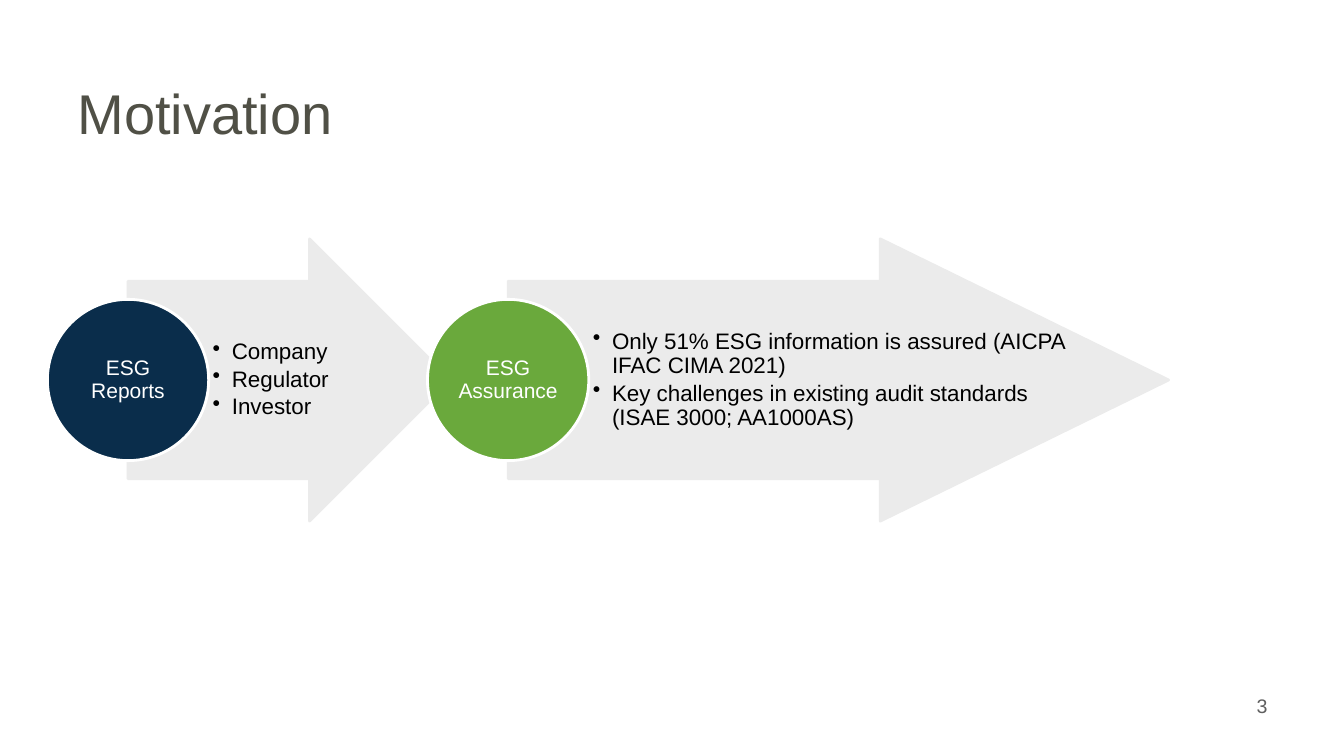
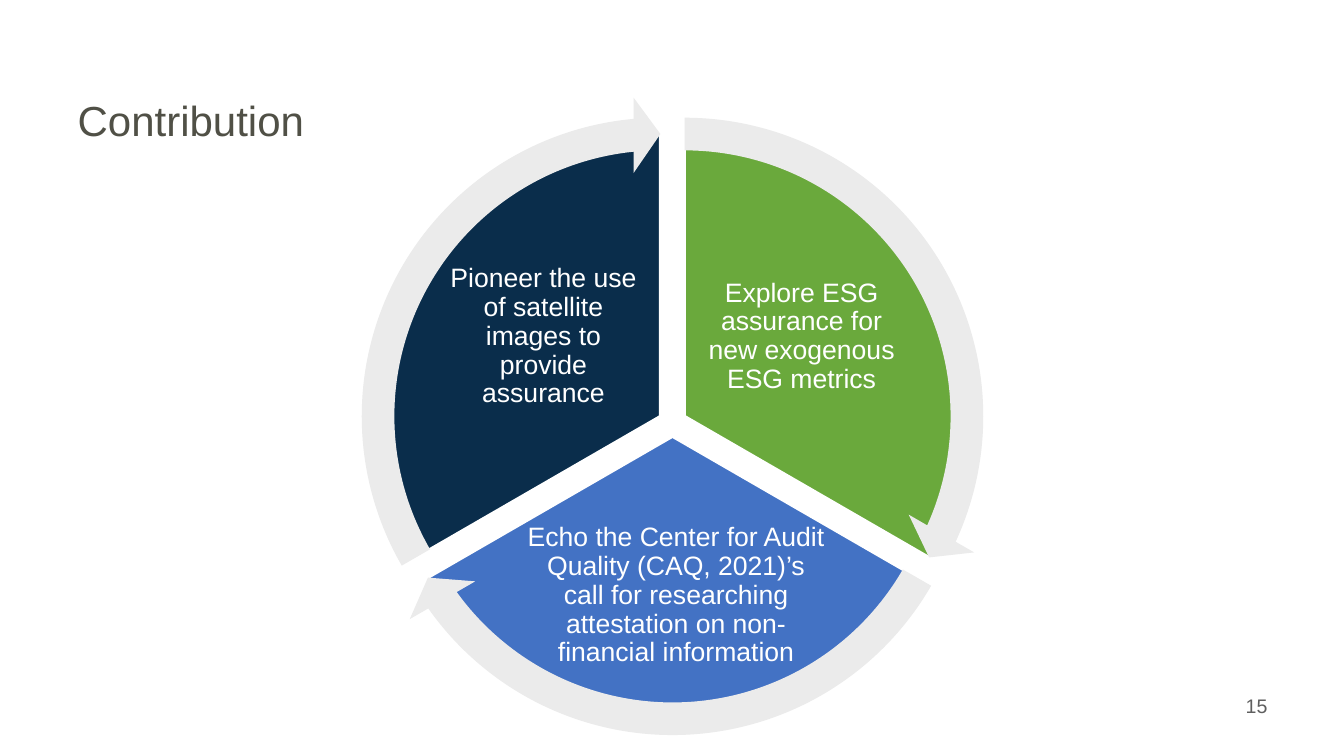
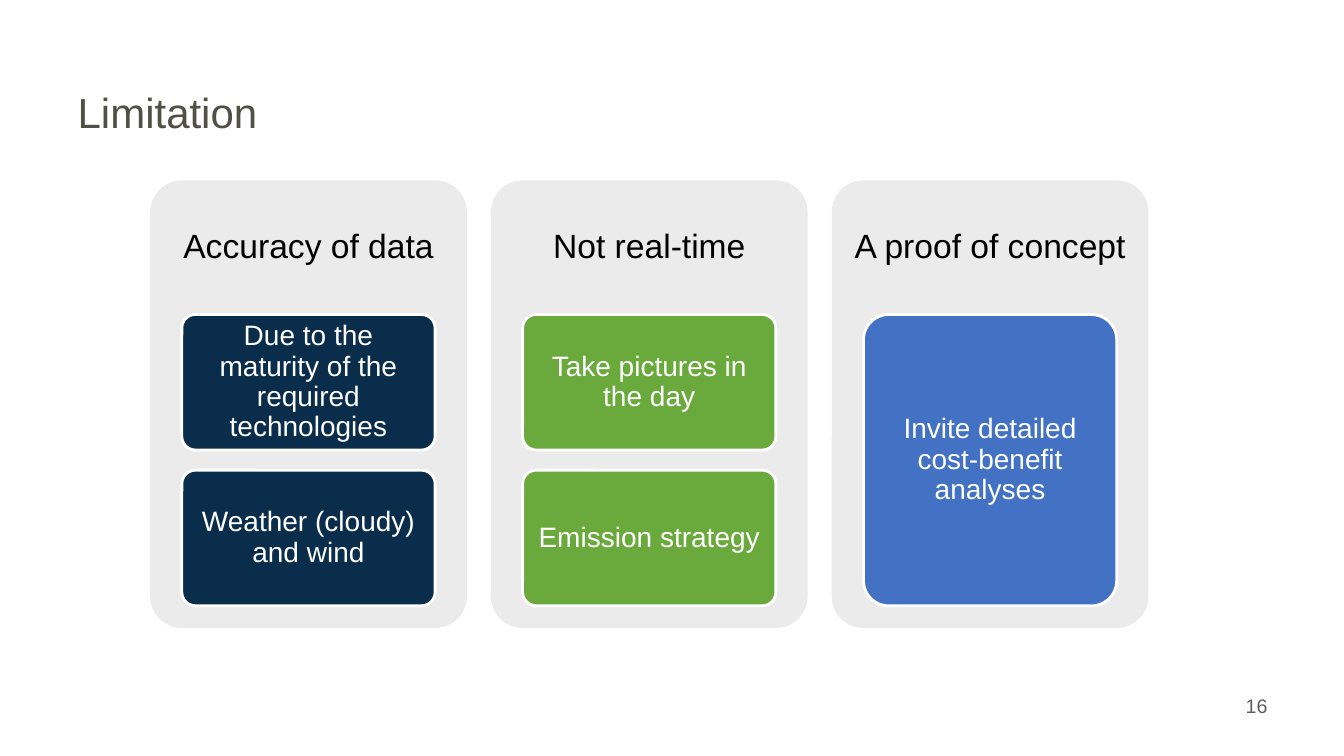
import pptx
import pptx.util
import pptx.dml.color
import pptx.enum.shapes
import pptx.enum.text
from lxml import etree

Inches = pptx.util.Inches
Pt = pptx.util.Pt
RGBColor = pptx.dml.color.RGBColor
SHAPE = pptx.enum.shapes.MSO_SHAPE
ALIGN = pptx.enum.text.PP_ALIGN
ANCHOR = pptx.enum.text.MSO_ANCHOR

NAVY = RGBColor(0x0A, 0x2D, 0x4B)
GREEN = RGBColor(0x6A, 0xA9, 0x3C)
BLUE = RGBColor(0x43, 0x72, 0xC4)
PALE = RGBColor(0xEB, 0xEB, 0xEB)
WHITE = RGBColor(0xFF, 0xFF, 0xFF)
BLACK = RGBColor(0x00, 0x00, 0x00)
TITLE = RGBColor(0x50, 0x50, 0x46)
GREY = RGBColor(0x5F, 0x5F, 0x5F)
FONT = "Arial"
A_NS = "http://schemas.openxmlformats.org/drawingml/2006/main"


def add_bullet(p):
    pPr = p._p.get_or_add_pPr()
    pPr.set("marL", str(Inches(0.19)))
    pPr.set("indent", str(-Inches(0.19)))
    etree.SubElement(pPr, f"{{{A_NS}}}buChar", char="•")


def write(sp, lines, size, color, align=ALIGN.CENTER, anchor=ANCHOR.MIDDLE,
          insets=(0, 0), spacing=0.9, bullets=False):
    tf = sp.text_frame
    tf.word_wrap = True
    tf.auto_size = pptx.enum.text.MSO_AUTO_SIZE.NONE
    tf.vertical_anchor = anchor
    tf.margin_left = tf.margin_right = Inches(insets[0])
    tf.margin_top = tf.margin_bottom = Inches(insets[1])
    tf.text = "\n".join(lines)
    for p in tf.paragraphs:
        if bullets:
            add_bullet(p)
            p.space_after = Pt(2.4)
        p.alignment = align
        p.line_spacing = spacing
        for r in p.runs:
            r.font.name = FONT
            r.font.size = Pt(size)
            r.font.color.rgb = color


def add_box(s, x, y, w, h):
    return s.shapes.add_textbox(Inches(x), Inches(y), Inches(w), Inches(h))


def add_block(s, kind, x, y, w, h, fill, line=None, adjust=()):
    sp = s.shapes.add_shape(kind, Inches(x), Inches(y), Inches(w), Inches(h))
    sp.shadow.inherit = False
    for i, value in enumerate(adjust):
        sp.adjustments[i] = value
    sp.fill.solid()
    sp.fill.fore_color.rgb = fill
    if line is None:
        sp.line.fill.background()
    else:
        sp.line.color.rgb = line
        sp.line.width = Pt(2)
    return sp


def add_slide(prs, title, number, size=30, top=0.67):
    s = prs.slides.add_slide(prs.slide_layouts[5])
    sp = s.shapes.title
    sp.left, sp.top = Inches(0.67), Inches(top)
    sp.width, sp.height = Inches(12), Inches(0.88)
    write(sp, [title], size, TITLE, ALIGN.LEFT, insets=(0.1, 0.05), spacing=1)
    write(add_box(s, 9.56, 6.83, 3.11, 0.52), [str(number)], 14, GREY,
          ALIGN.RIGHT, ANCHOR.TOP, (0.1, 0.05), 1)
    return s


def add_step(s, x, y, w, h, head, label, fill, points):
    add_block(s, SHAPE.RIGHT_ARROW, x, y, w, h, PALE, PALE, (0.7, head / h))
    write(add_box(s, x + 0.84, y + 0.43, w - 1.7, h - 0.86), points, 16, BLACK,
          ALIGN.LEFT, bullets=True)
    d = 1.6
    circle = add_block(s, SHAPE.OVAL, x - d / 2, y + (h - d) / 2, d, d, fill, WHITE)
    write(circle, [label], 15, WHITE)


def motivation(prs):
    s = add_slide(prs, "Motivation", 3, size=40)
    add_step(s, 1.27, 2.37, 3.2, 2.8, 1.4, "ESG Reports", NAVY,
             ["Company", "Regulator", "Investor"])
    add_step(s, 5.04, 2.37, 6.55, 2.8, 2.86, "ESG Assurance", GREEN,
             ["Only 51% ESG information is assured (AICPA IFAC CIMA 2021)",
              "Key challenges in existing audit standards (ISAE 3000; AA1000AS)"])


def angle(degrees):
    return degrees % 360 * 0.6


def add_cycle(s, cx, cy, pie, ring, parts):
    for i, (dx, dy, fill, label, box) in enumerate(parts):
        start = 270 + 120 * i
        add_block(s, SHAPE.PIE, cx + dx - pie / 2, cy + dy - pie / 2, pie, pie,
                  fill, WHITE, (angle(start), angle(start + 120)))
        x, y, w, h = box
        write(add_box(s, cx + x, cy + y, w, h), [label], 19, WHITE,
              insets=(0.03, 0.03))
    for i, (dx, dy, *_) in enumerate(parts):
        start = 270 + 120 * i
        add_block(s, SHAPE.CIRCULAR_ARROW, cx + dx - ring / 2, cy + dy - ring / 2,
                  ring, ring, PALE,
                  adjust=(0.051, 3.275, angle(start + 114.54), angle(start), 0.059))


def contribution(prs):
    s = add_slide(prs, "Contribution", 15, top=0.75)
    add_cycle(s, 6.67, 4.13, 5.65, 6.35, [
        (0.12, 0, GREEN, "Explore ESG assurance for new exogenous ESG metrics",
         (0.27, -1.63, 2.02, 1.68)),
        (0, 0.2, BLUE, "Echo the Center for Audit Quality (CAQ, 2021)’s call for "
         "researching attestation on non-financial information",
         (-1.48, 1.04, 3.03, 1.48)),
        (-0.12, 0, NAVY, "Pioneer the use of satellite images to provide assurance",
         (-2.29, -1.63, 2.02, 1.68)),
    ])


def add_card(s, x, y, w, h, heading, fill, items):
    add_block(s, SHAPE.ROUNDED_RECTANGLE, x, y, w, h, PALE, adjust=(0.1,))
    write(add_box(s, x, y, w, 1.33), [heading], 24, BLACK, insets=(0.1, 0.1))
    gap, inner = 0.2, 2.89
    item_h = (inner - gap * (len(items) - 1)) / len(items)
    for i, item in enumerate(items):
        sp = add_block(s, SHAPE.ROUNDED_RECTANGLE, x + w * 0.1,
                       y + 1.33 + i * (item_h + gap), w * 0.8, item_h,
                       fill, WHITE, (0.1,))
        write(sp, [item], 20, WHITE, insets=(0.06, 0.04))


def limitation(prs):
    s = add_slide(prs, "Limitation", 16)
    cards = [
        ("Accuracy of data", NAVY,
         ["Due to the maturity of the required technologies",
          "Weather (cloudy) and wind"]),
        ("Not real-time", GREEN, ["Take pictures in the day", "Emission strategy"]),
        ("A proof of concept", BLUE, ["Invite detailed cost-benefit analyses"]),
    ]
    for i, card in enumerate(cards):
        add_card(s, 1.49 + 3.38 * i, 1.79, 3.14, 4.44, *card)


def main():
    prs = pptx.Presentation()
    prs.slide_width, prs.slide_height = Inches(13.33), Inches(7.5)
    motivation(prs)
    contribution(prs)
    limitation(prs)
    prs.save("out.pptx")


if __name__ == "__main__":
    main()
